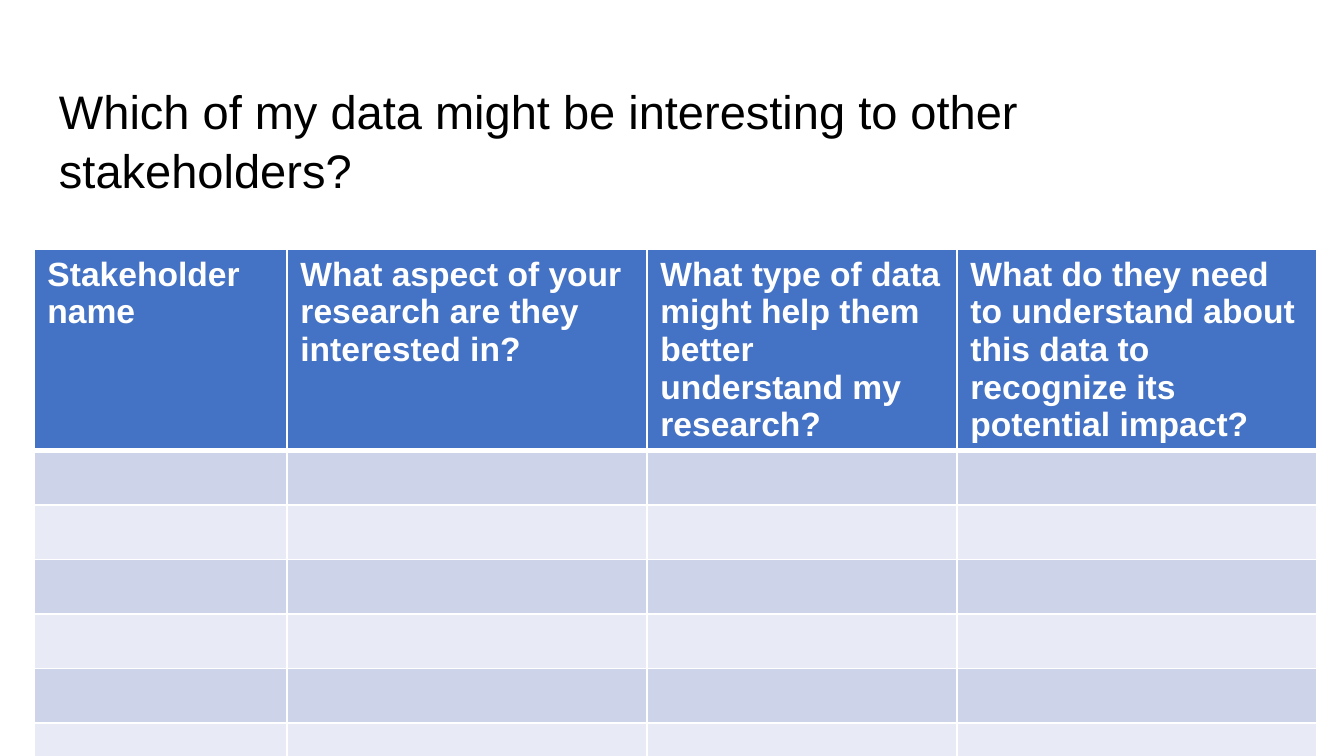
from lxml import etree
from pptx import Presentation
from pptx.dml.color import RGBColor
from pptx.enum.text import MSO_ANCHOR, MSO_AUTO_SIZE, PP_ALIGN
from pptx.oxml.ns import qn
from pptx.util import Pt

MIDDLE, LEFT, NO_FIT = MSO_ANCHOR.MIDDLE, PP_ALIGN.LEFT, MSO_AUTO_SIZE.NONE

# Content
TITLE = "Which of my data might be interesting to other stakeholders?"
HEADS = [
    "Stakeholder name",
    "What aspect of your research are they interested in?",
    "What type of data might help them better understand my research?",
    "What do they need to understand about this data to recognize its potential impact?",
]
BLANKS = 6  # rows to fill in

# Layout in px and colours
WIDE, HIGH = 1344, 756
BOX = (46, 66, 1252, 145)
GRID = (34, 249)
COLS = [253, 360, 310, 360]
HEAD, ROW = 201, 54
WHITE, BLACK, BLUE = "FFFFFF", "000000", "4472C4"
BANDS = ["CDD4EA", "E8EBF5"]


def px(n):
    return round(n * 914400 / 134.4)


def rgb(code):
    return RGBColor.from_string(code)


def style(para, size, color, bold=False):
    para.alignment = LEFT
    font = para.font
    font.name, font.size, font.bold = "Arial", Pt(size), bold
    font.color.rgb = rgb(color)


def edge(cell, side, width):
    line = etree.SubElement(cell._tc.get_or_add_tcPr(), qn("a:ln" + side), w=str(Pt(width)))
    fill = etree.SubElement(line, qn("a:solidFill"))
    etree.SubElement(fill, qn("a:srgbClr"), val=WHITE)


def paint(cell, color, top, bottom):
    for side, width in zip("LRTB", (1, 1, top, bottom)):
        edge(cell, side, width)
    cell.fill.solid()
    cell.fill.fore_color.rgb = rgb(color)


deck = Presentation()
deck.slide_width, deck.slide_height = px(WIDE), px(HIGH)
slide = deck.slides.add_slide(deck.slide_layouts[5])

# Title
title = slide.shapes.title
title.left, title.top, title.width, title.height = map(px, BOX)
frame = title.text_frame
frame.text = TITLE
frame.word_wrap, frame.auto_size = True, NO_FIT
frame.vertical_anchor = MIDDLE
frame.margin_left = frame.margin_right = px(13)
frame.margin_top = frame.margin_bottom = px(13)
style(frame.paragraphs[0], 25.2, BLACK)
frame.paragraphs[0].line_spacing = 1.05

# Table
sizes = [HEAD] + [ROW] * BLANKS
table = slide.shapes.add_table(
    len(sizes), len(COLS), *map(px, (*GRID, sum(COLS), sum(sizes)))
).table
for col, width in zip(table.columns, COLS):
    col.width = px(width)
for row, height in zip(table.rows, sizes):
    row.height = px(height)

# Header row
for cell, text in zip(table.rows[0].cells, HEADS):
    cell.text = text
    style(cell.text_frame.paragraphs[0], 18, WHITE, True)
    paint(cell, BLUE, 1, 3)

# Banded rows
for i in range(BLANKS):
    for cell in table.rows[i + 1].cells:
        paint(cell, BANDS[i % 2], 1 if i else 3, 1)

deck.save("out.pptx")
